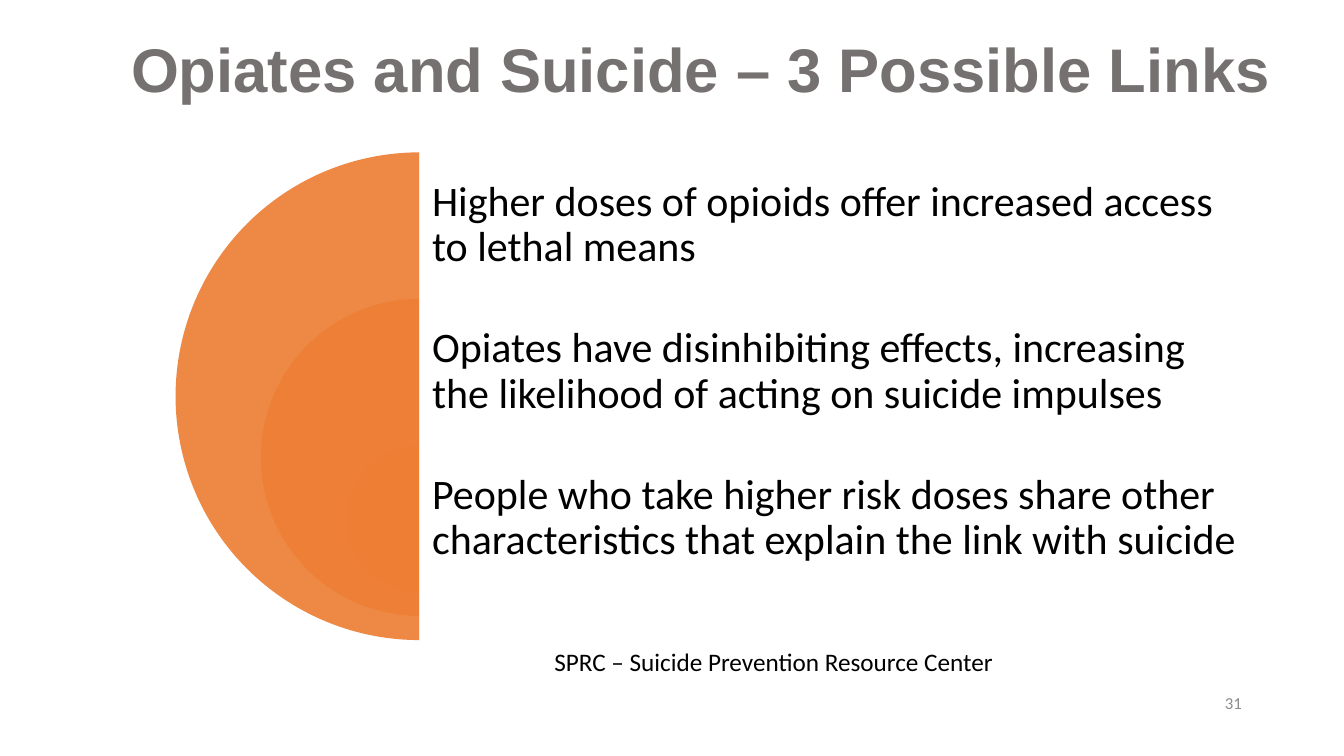
import pptx
import pptx.dml.color
import pptx.enum.shapes
import pptx.enum.text
import pptx.oxml
import pptx.oxml.ns
import pptx.util
from pptx.util import Cm

SHAPES = pptx.enum.shapes.MSO_SHAPE
ALIGN = pptx.enum.text.PP_ALIGN
ANCHOR = pptx.enum.text.MSO_ANCHOR

ORANGE = "ED7D31"
WHITE = "FFFFFF"
BLACK = "000000"
GREY = "767171"
LIGHT_GREY = "8C8C8C"

LINKS = [
    "Higher doses of opioids offer increased access to lethal means",
    "Opiates have disinhibiting effects, increasing the likelihood of acting on suicide impulses",
    "People who take higher risk doses share other characteristics that explain the link with suicide",
]

AXIS = 10.57  # flat edge of the half discs and left edge of the texts, in cm
TOP = 3.84
ROW_HEIGHT = 3.69
PANEL_WIDTH = 21.23
LARGEST_DISC = 12.29
DISC_STEP = 4.3


def colour(hex_string):
    return pptx.dml.color.RGBColor.from_string(hex_string)


def format_text(frame, text, size, hex_string, font="Calibri", bold=False,
                align=ALIGN.LEFT, anchor=ANCHOR.TOP, spacing=None):
    frame.text = text
    frame.word_wrap = True
    frame.vertical_anchor = anchor
    para = frame.paragraphs[0]
    para.alignment = align
    para.line_spacing = spacing
    span = para.runs[0]
    span.font.name = font
    span.font.size = pptx.util.Pt(size)
    span.font.bold = bold
    span.font.color.rgb = colour(hex_string)


def add_text(page, left, top, width, height, text, size, hex_string, inset=None, **style):
    box = page.shapes.add_textbox(Cm(left), Cm(top), Cm(width), Cm(height))
    frame = box.text_frame
    format_text(frame, text, size, hex_string, **style)
    if inset is not None:
        frame.margin_left = frame.margin_right = Cm(inset)
        frame.margin_top = frame.margin_bottom = Cm(inset)


def add_tinted_shape(page, kind, left, top, width, height, hex_string, opacity):
    """Add a shape without outline whose fill has the given opacity in percent."""
    shape = page.shapes.add_shape(kind, Cm(left), Cm(top), Cm(width), Cm(height))
    shape.shadow.inherit = False
    shape.line.fill.background()
    shape.fill.solid()
    shape.fill.fore_color.rgb = colour(hex_string)
    tint = shape.fill._xPr.find(".//" + pptx.oxml.ns.qn("a:srgbClr"))
    alpha = pptx.oxml.parse_xml(
        f'<a:alpha {pptx.oxml.ns.nsdecls("a")} val="{opacity * 1000}"/>')
    tint.append(alpha)
    return shape


def add_link(page, index, text):
    """Add one half disc with its panel and text; each is smaller than the one before."""
    size = LARGEST_DISC - index * DISC_STEP
    top = TOP + index * ROW_HEIGHT
    disc = add_tinted_shape(page, SHAPES.PIE, AXIS - size / 2, top, size, size,
                            ORANGE, 90 - 20 * index)
    disc.adjustments[0] = 54
    disc.adjustments[1] = 162
    add_tinted_shape(page, SHAPES.RECTANGLE, AXIS, top, PANEL_WIDTH, size, WHITE, 90)
    add_text(page, AXIS, top, PANEL_WIDTH, ROW_HEIGHT, text, 30, BLACK,
             inset=0.32, anchor=ANCHOR.MIDDLE, spacing=0.9)


def add_title(page, text):
    title = page.shapes.title
    title.left, title.top = Cm(3.05), Cm(0.84)
    title.width, title.height = Cm(30.07), Cm(1.98)
    format_text(title.text_frame, text, 44, GREY, font="Arial", bold=True,
                anchor=ANCHOR.MIDDLE, spacing=0.9)


def main():
    deck = pptx.Presentation()
    deck.slide_width, deck.slide_height = Cm(33.87), Cm(19.05)
    page = deck.slides.add_slide(deck.slide_layouts.get_by_name("Title Only"))
    add_title(page, "Opiates and Suicide – 3 Possible Links")
    for index, text in enumerate(LINKS):
        add_link(page, index, text)
    add_text(page, 13.72, 16.15, 12.93, 1.02,
             "SPRC – Suicide Prevention Resource Center", 18, BLACK)
    add_text(page, 23.93, 17.2, 7.62, 1.02, "31", 12, LIGHT_GREY,
             align=ALIGN.RIGHT, anchor=ANCHOR.MIDDLE)
    deck.save("out.pptx")


if __name__ == "__main__":
    main()
